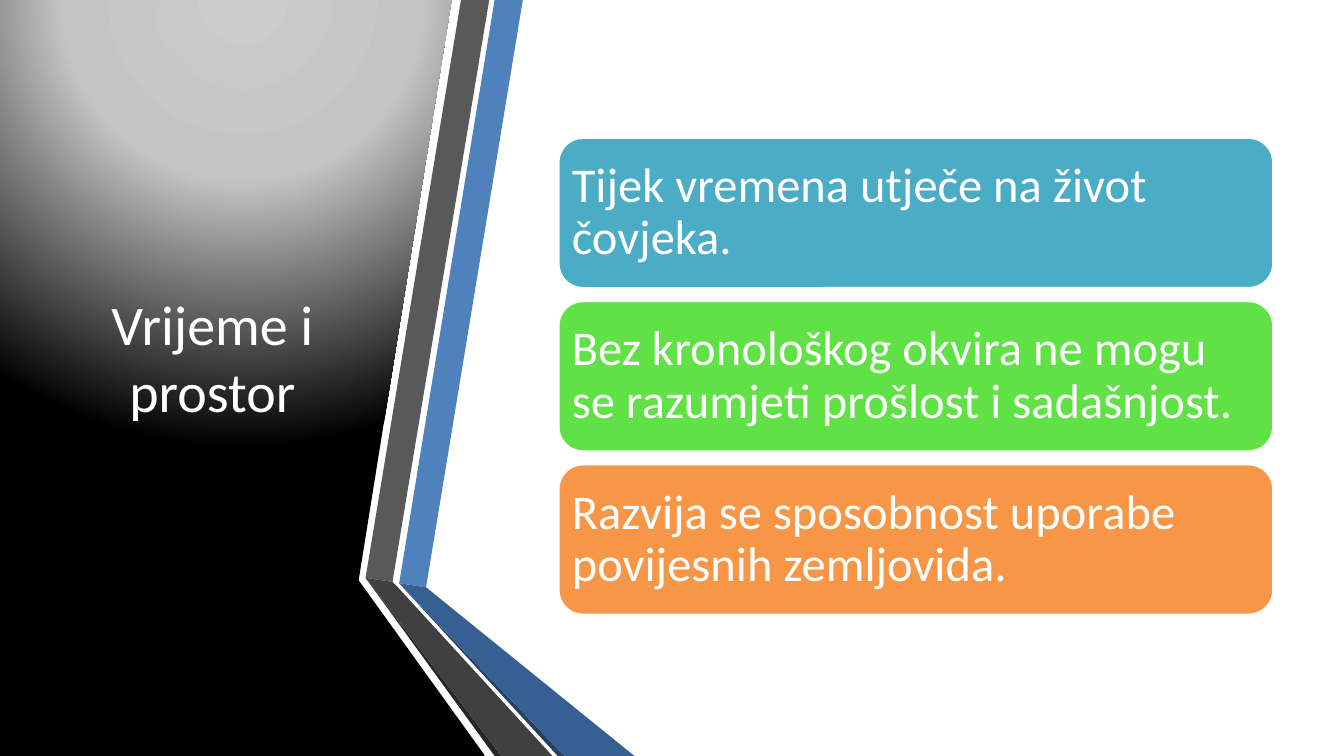
from lxml import etree
from pptx import Presentation
from pptx.dml.color import RGBColor
from pptx.enum.shapes import MSO_SHAPE as Shape
from pptx.enum.text import MSO_ANCHOR as Anchor, MSO_AUTO_SIZE as AutoSize, PP_ALIGN as Align
from pptx.oxml.ns import nsdecls, qn
from pptx.util import Inches, Pt

WIDTH = 10
HEIGHT = WIDTH * 9 / 16
FONT = "Calibri"
WHITE = "FFFFFF"

TITLE = "Vrijeme i prostor"
CARDS = [
    ("Tijek vremena utječe na život čovjeka.", "4BACC6"),
    ("Bez kronološkog okvira ne mogu se razumjeti prošlost i sadašnjost.", "60E146"),
    ("Razvija se sposobnost uporabe povijesnih zemljovida.", "F79646"),
]
CARD_LEFT, CARD_WIDTH, CARD_HEIGHT = 4.15, 5.33, 1.13
FIRST_TOP, LAST_TOP = 1.02, 3.45

PANEL = [(2.64, 0), (3.36, 0), (2.67, 4.31), (2.67, 4.32), (3.61, HEIGHT), (0, HEIGHT), (0, 0)]
PANEL_STOPS = [(0, "CCCCCC"), (40, "C4C4C4"), (100, "000000")]
RIBBONS = [
    ("4F81BD", [(2.97, 4.34), (3.17, 4.37), (3.89, 0), (3.68, 0)]),
    ("595959", [(3.64, 0), (3.43, 0), (2.72, 4.3), (2.92, 4.33)]),
    ("262626", [(2.72, 4.3), (3.68, HEIGHT), (3.73, HEIGHT)]),
    ("254061", [(2.97, 4.34), (4.15, HEIGHT), (4.2, HEIGHT)]),
    ("376092", [(2.97, 4.34), (4.2, HEIGHT), (4.72, HEIGHT), (3.17, 4.37)]),
    ("404040", [(4.11, HEIGHT), (2.96, 4.37), (2.92, 4.33), (2.72, 4.3), (3.73, HEIGHT)]),
]


def color(value):
    return RGBColor.from_string(value)


def add_polygon(slide, points, fill):
    corners = [(Inches(x), Inches(y)) for x, y in points]
    builder = slide.shapes.build_freeform(*corners[0], scale=1.0)
    builder.add_line_segments(corners[1:], close=True)
    polygon = builder.convert_to_shape()
    polygon.shadow.inherit = False
    polygon.fill.solid()
    polygon.fill.fore_color.rgb = color(fill)
    polygon.line.fill.background()
    return polygon


def set_radial_fill(shape, stops):
    """Replace the solid fill by a circular gradient centred above the shape."""
    marks = "".join(
        f'<a:gs pos="{place * 1000}"><a:srgbClr val="{value}"/></a:gs>' for place, value in stops
    )
    gradient = etree.fromstring(
        f'<a:gradFill {nsdecls("a")} rotWithShape="1"><a:gsLst>{marks}</a:gsLst>'
        '<a:path path="circle">'
        '<a:fillToRect l="50000" t="-80000" r="50000" b="180000"/></a:path></a:gradFill>'
    )
    properties = shape.element.spPr
    properties.replace(properties.find(qn("a:solidFill")), gradient)


def write(shape, text, size, align, inset_x, inset_y, line_spacing=1.0):
    frame = shape.text_frame
    frame.word_wrap = True
    frame.auto_size = AutoSize.NONE
    frame.vertical_anchor = Anchor.MIDDLE
    frame.margin_left = frame.margin_right = Inches(inset_x)
    frame.margin_top = frame.margin_bottom = Inches(inset_y)
    para = frame.paragraphs[0]
    para.alignment = align
    para.line_spacing = line_spacing
    span = para.add_run()
    span.text = text
    span.font.name = FONT
    span.font.size = Pt(size)
    span.font.color.rgb = color(WHITE)


def add_card(slide, top, text, fill):
    card = slide.shapes.add_shape(
        Shape.ROUNDED_RECTANGLE,
        Inches(CARD_LEFT), Inches(top), Inches(CARD_WIDTH), Inches(CARD_HEIGHT),
    )
    card.shadow.inherit = False
    card.fill.solid()
    card.fill.fore_color.rgb = color(fill)
    card.line.color.rgb = color(WHITE)
    card.line.width = Pt(2)
    # The rounded corners already inset the text by about 0.06 inch.
    write(card, text, 26, Align.LEFT, 0.05, 0.05, line_spacing=0.9)


def main():
    deck = Presentation()
    deck.slide_width, deck.slide_height = Inches(WIDTH), Inches(HEIGHT)
    slide = deck.slides.add_slide(deck.slide_layouts[5])

    panel = add_polygon(slide, PANEL, "000000")
    set_radial_fill(panel, PANEL_STOPS)
    for fill, points in RIBBONS:
        add_polygon(slide, points, fill)

    title = slide.shapes.title
    title.left, title.top = Inches(0.44), Inches(0.56)
    title.width, title.height = Inches(2.28), Inches(4.19)
    write(title, TITLE, 30, Align.CENTER, 0.1, 0.05)
    title.element.getparent().append(title.element)  # bring in front of the panel

    pitch = (LAST_TOP - FIRST_TOP) / (len(CARDS) - 1)
    for index, (text, fill) in enumerate(CARDS):
        add_card(slide, FIRST_TOP + index * pitch, text, fill)

    deck.save("out.pptx")


if __name__ == "__main__":
    main()
